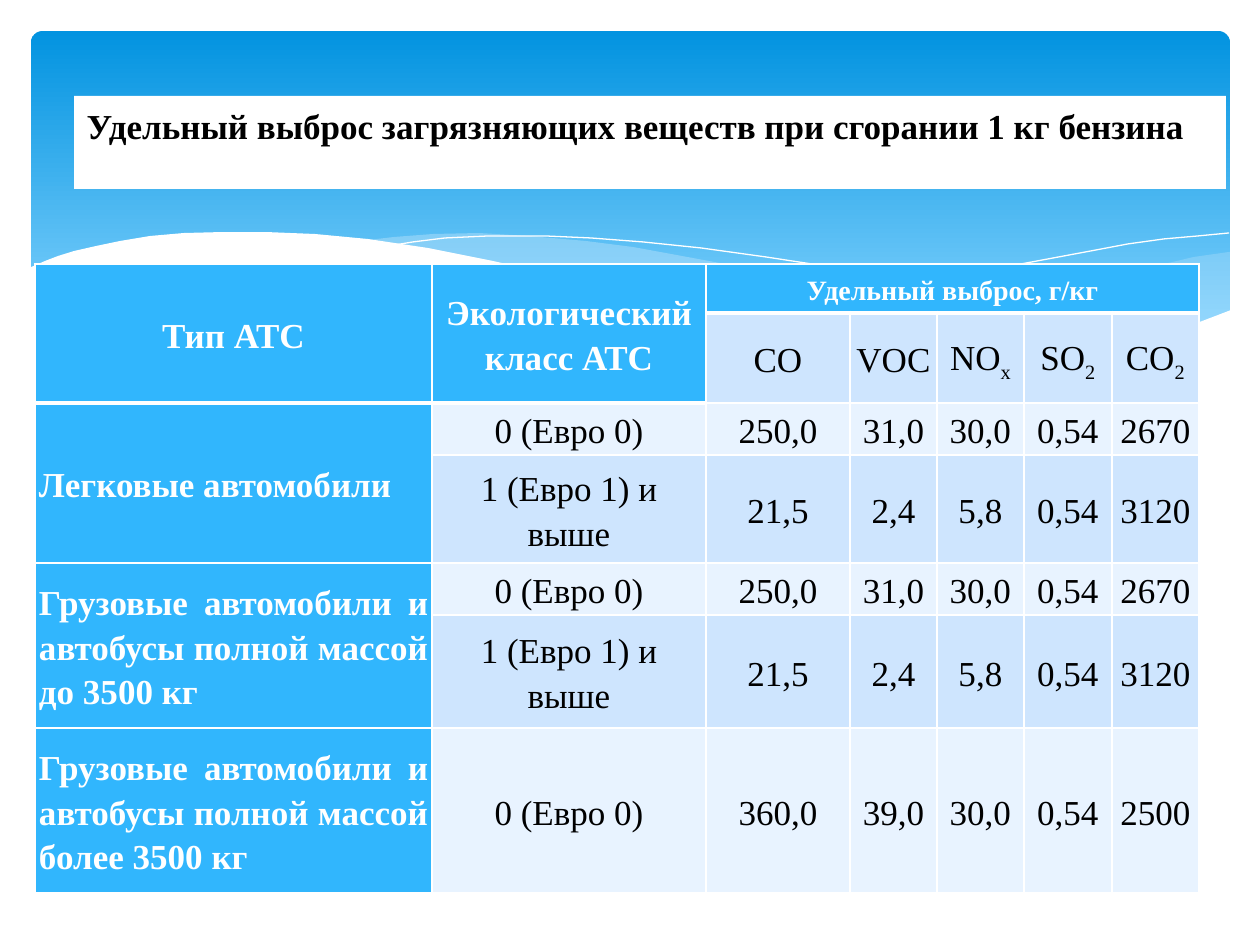
"""Build the slide on specific pollutant emissions per kilogram of petrol."""
from dataclasses import dataclass
from typing import Optional

import lxml.etree
import pptx
import pptx.dml.color
import pptx.enum.shapes
import pptx.enum.text
import pptx.oxml.ns
import pptx.util

RGB = pptx.dml.color.RGBColor
ALIGN = pptx.enum.text.PP_ALIGN
ANCHOR = pptx.enum.text.MSO_ANCHOR
PX = 914400 / 126
FONT = "Times New Roman"

WHITE = RGB(0xFF, 0xFF, 0xFF)
BLACK = RGB(0x00, 0x00, 0x00)
SKY_TOP = RGB(0x02, 0x93, 0xE0)
SKY_BOTTOM = RGB(0x83, 0xD3, 0xFE)
WAVE_BLUE = RGB(0xC6, 0xE7, 0xFC)
HEADER_BLUE = RGB(0x31, 0xB6, 0xFD)
BAND_DARK = RGB(0xCE, 0xE5, 0xFE)
BAND_LIGHT = RGB(0xE8, 0xF3, 0xFF)


@dataclass(frozen=True)
class Wave:
    points: list[tuple[int, int]]
    fill: Optional[RGB] = None
    opacity: int = 100


@dataclass(frozen=True)
class CellStyle:
    fill: RGB
    color: RGB = BLACK
    bold: bool = False
    size: int = 20
    align: ALIGN = ALIGN.CENTER


HEADER = CellStyle(HEADER_BLUE, WHITE, True)
GROUP_HEADER = CellStyle(HEADER_BLUE, WHITE, True, size=16)
VEHICLE = CellStyle(HEADER_BLUE, WHITE, True, align=ALIGN.JUSTIFY)
DARK = CellStyle(BAND_DARK)
LIGHT = CellStyle(BAND_LIGHT)

WAVES = [
    Wave([(1229, 252), (1194, 257), (1160, 265), (1123, 272), (1085, 281), (1014, 299),
          (949, 312), (890, 324), (833, 334), (888, 341), (939, 347), (984, 349),
          (1026, 350), (1076, 348), (1120, 343), (1160, 334), (1196, 324), (1230, 311),
          (1230, 252)], WAVE_BLUE, 29),
    Wave([(1125, 344), (1055, 334), (977, 320), (890, 302), (793, 280), (736, 266),
          (682, 256), (633, 247), (586, 241), (529, 236), (479, 233), (433, 234),
          (394, 237), (360, 241), (407, 247), (456, 256), (509, 266), (566, 280),
          (668, 302), (757, 321), (819, 333), (876, 340), (927, 347), (989, 350),
          (1043, 350), (1092, 348)], WAVE_BLUE, 40),
    Wave([(389, 246), (413, 242), (445, 238), (488, 236), (546, 236), (591, 238),
          (643, 242), (701, 248), (766, 257), (838, 268), (916, 285), (1002, 304),
          (1095, 329), (1143, 343)]),
    Wave([(772, 324), (823, 310), (876, 296), (942, 281), (1016, 265), (1091, 251),
          (1128, 244), (1164, 239), (1198, 236), (1229, 233)]),
    Wave([(1231, 310), (1197, 323), (1159, 334), (1118, 341), (1071, 347), (1019, 349),
          (959, 347), (892, 340), (816, 330), (730, 315), (634, 294), (563, 277),
          (493, 261), (428, 248), (368, 239), (315, 234), (266, 232), (223, 232),
          (184, 233), (150, 236), (120, 241), (96, 246), (74, 251), (58, 256),
          (45, 261), (29, 268), (29, 415), (1231, 415)], WHITE),
]

COLUMNS = [397, 274, 144, 87, 87, 88, 87]
ROWS = [49, 90, 52, 108, 52, 113, 165]
MERGES = [((0, 0), (1, 0)), ((0, 1), (1, 1)), ((0, 2), (0, 6)),
          ((2, 0), (3, 0)), ((4, 0), (5, 0))]
POLLUTANTS = [("СО", ""), ("VOC", ""), ("NO", "x"), ("SO", "2"), ("СО", "2")]
VEHICLES = {
    2: "Легковые автомобили",
    4: "Грузовые автомобили и автобусы полной массой до 3500 кг",
    6: "Грузовые автомобили и автобусы полной массой более 3500 кг",
}
EURO_0 = ["0 (Евро 0)", "250,0", "31,0", "30,0", "0,54", "2670"]
EURO_1 = ["1 (Евро 1) и выше", "21,5", "2,4", "5,8", "0,54", "3120"]
HEAVY = ["0 (Евро 0)", "360,0", "39,0", "30,0", "0,54", "2500"]
EMISSIONS = [EURO_0, EURO_1, EURO_0, EURO_1, HEAVY]


def px(length: int) -> pptx.util.Emu:
    """Turn pixels into EMU."""
    return pptx.util.Emu(round(length * PX))


def add_run(paragraph, text: str, size: int, color: RGB, bold: bool):
    """Add one formatted run."""
    run = paragraph.add_run()
    run.text = text
    run.font.name = FONT
    run.font.size = pptx.util.Pt(size)
    run.font.bold = bold
    run.font.color.rgb = color
    return run


def draw_sky(slide) -> None:
    """Draw the rounded gradient backdrop."""
    sky = slide.shapes.add_shape(pptx.enum.shapes.MSO_SHAPE.ROUNDED_RECTANGLE,
                                 px(31), px(31), px(1199), px(340))
    sky.adjustments[0] = 0.034
    sky.shadow.inherit = False
    sky.line.fill.background()
    sky.fill.gradient()
    sky.fill.gradient_angle = 270
    for stop, color, position in zip(sky.fill.gradient_stops, (SKY_TOP, SKY_BOTTOM), (0, 0.9)):
        stop.color.rgb = color
        stop.position = position


def draw_wave(slide, wave: Wave) -> None:
    """Draw a filled wave, or a white hairline when it has no fill."""
    builder = slide.shapes.build_freeform(*wave.points[0], scale=PX)
    builder.add_line_segments(wave.points[1:], close=wave.fill is not None)
    shape = builder.convert_to_shape()
    shape.shadow.inherit = False
    if wave.fill is None:
        shape.fill.background()
        shape.line.color.rgb = WHITE
        shape.line.width = pptx.util.Pt(0)
        return
    shape.line.fill.background()
    shape.fill.solid()
    shape.fill.fore_color.rgb = wave.fill
    if wave.opacity < 100:
        color = shape.element.spPr.find(".//" + pptx.oxml.ns.qn("a:srgbClr"))
        lxml.etree.SubElement(color, pptx.oxml.ns.qn("a:alpha"), val=str(wave.opacity * 1000))


def draw_borders(cell, bottom: int) -> None:
    """Give a cell white borders with the bottom width in points."""
    properties = cell._tc.get_or_add_tcPr()
    for side, width in (("L", 1), ("R", 1), ("T", 1), ("B", bottom)):
        line = lxml.etree.SubElement(properties, pptx.oxml.ns.qn(f"a:ln{side}"),
                                     w=str(pptx.util.Pt(width)))
        fill = lxml.etree.SubElement(line, pptx.oxml.ns.qn("a:solidFill"))
        lxml.etree.SubElement(fill, pptx.oxml.ns.qn("a:srgbClr"), val=str(WHITE))


def fill_cell(cell, text: str, style: CellStyle, subscript: str = "") -> None:
    """Write and colour one table cell."""
    cell.fill.solid()
    cell.fill.fore_color.rgb = style.fill
    cell.vertical_anchor = ANCHOR.MIDDLE
    cell.margin_left = cell.margin_right = px(4)
    cell.margin_top = cell.margin_bottom = 0
    paragraph = cell.text_frame.paragraphs[0]
    paragraph.alignment = style.align
    paragraph.line_spacing = 1.15
    for index, line in enumerate(text.split("\n")):
        if index:
            paragraph.add_line_break()
        add_run(paragraph, line, style.size, style.color, style.bold)
    if subscript:
        run = add_run(paragraph, subscript, style.size, style.color, style.bold)
        run._r.get_or_add_rPr().set("baseline", "-25000")


def draw_table(slide) -> None:
    """Draw the emissions table."""
    table = slide.shapes.add_table(len(ROWS), len(COLUMNS), px(35), px(264),
                                   px(sum(COLUMNS)), px(sum(ROWS))).table
    table.horz_banding = False
    for column, width in zip(table.columns, COLUMNS):
        column.width = px(width)
    for row, height in zip(table.rows, ROWS):
        row.height = px(height)
    for row in range(len(ROWS)):
        for column in range(len(COLUMNS)):
            thick = row == 0 or (row == 1 and column < 2)
            draw_borders(table.cell(row, column), 3 if thick else 1)
    for first, last in MERGES:
        table.cell(*first).merge(table.cell(*last))
    fill_cell(table.cell(0, 0), "Тип АТС", HEADER)
    fill_cell(table.cell(0, 1), "Экологический\nкласс АТС", HEADER)
    fill_cell(table.cell(0, 2), "Удельный выброс, г/кг", GROUP_HEADER)
    for column, (formula, subscript) in enumerate(POLLUTANTS, 2):
        fill_cell(table.cell(1, column), formula, DARK, subscript)
    for row, vehicle in VEHICLES.items():
        fill_cell(table.cell(row, 0), vehicle, VEHICLE)
    for row, values in enumerate(EMISSIONS, 2):
        for column, value in enumerate(values, 1):
            fill_cell(table.cell(row, column), value, DARK if row % 2 else LIGHT)


def place_title(slide) -> None:
    """Format the title placeholder and bring it to the front."""
    title = slide.shapes.title
    title.left, title.top, title.width, title.height = px(74), px(96), px(1152), px(93)
    title.fill.solid()
    title.fill.fore_color.rgb = WHITE
    frame = title.text_frame
    frame.word_wrap = True
    frame.auto_size = pptx.enum.text.MSO_AUTO_SIZE.NONE
    frame.vertical_anchor = ANCHOR.TOP
    frame.margin_top = px(9)
    paragraph = frame.paragraphs[0]
    paragraph.alignment = ALIGN.LEFT
    add_run(paragraph, "Удельный выброс загрязняющих веществ при сгорании 1 кг бензина",
            20, BLACK, True)
    title.element.getparent().append(title.element)


def main() -> None:
    """Build and save the presentation."""
    presentation = pptx.Presentation()
    presentation.slide_width, presentation.slide_height = px(1260), px(945)
    slide = presentation.slides.add_slide(presentation.slide_layouts[5])
    draw_sky(slide)
    for wave in WAVES:
        draw_wave(slide, wave)
    draw_table(slide)
    place_title(slide)
    presentation.save("out.pptx")


if __name__ == "__main__":
    main()
